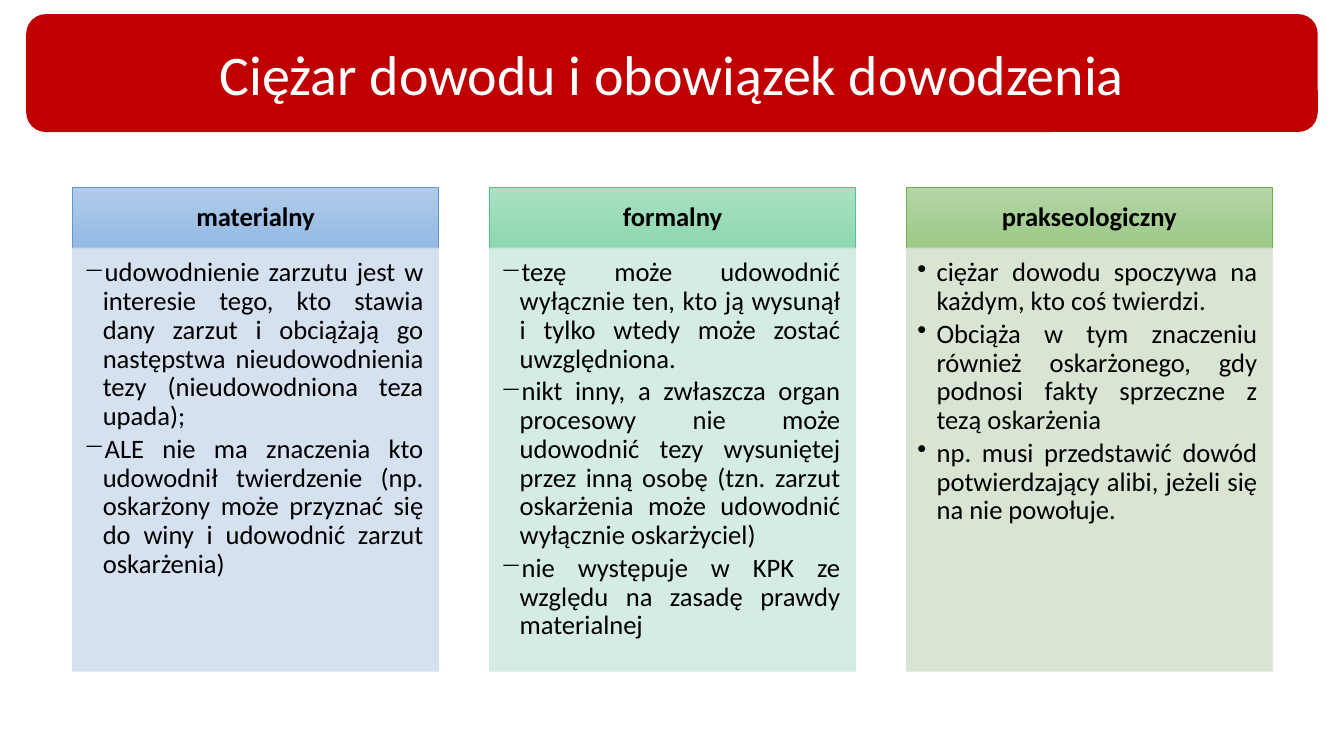
from dataclasses import dataclass

from lxml.etree import SubElement
from pptx import Presentation
from pptx.dml.color import RGBColor
from pptx.enum.shapes import MSO_SHAPE
from pptx.enum.text import MSO_ANCHOR, PP_ALIGN
from pptx.oxml.ns import qn
from pptx.util import Inches, Pt


@dataclass(frozen=True)
class Theme:
    """Colours, font and type sizes of the slide."""
    font: str = "Calibri"
    title_size: int = 40
    text_size: int = 19
    banner: str = "C00000"
    title: str = "FFFFFF"
    text: str = "000000"


@dataclass(frozen=True)
class Box:
    """A rectangle in inches."""
    left: float
    top: float
    width: float
    height: float


@dataclass(frozen=True)
class Column:
    """Wording and colours of one meaning of the burden of proof."""
    heading: str
    bullet: str
    points: tuple
    gradient: tuple
    border: str
    panel: str


THEME = Theme()
COLUMNS = (
    Column("materialny", "−", (
        "udowodnienie zarzutu jest w interesie tego, kto stawia dany zarzut i obciążają go "
        "następstwa nieudowodnienia tezy (nieudowodniona teza upada);",
        "ALE nie ma znaczenia kto udowodnił twierdzenie (np. oskarżony może przyznać się "
        "do winy i udowodnić zarzut oskarżenia)",
    ), ("B1CBE9", "93B9E4"), "5B9BD5", "D2DEEF"),
    Column("formalny", "−", (
        "tezę może udowodnić wyłącznie ten, kto ją wysunął i tylko wtedy może zostać "
        "uwzględniona.",
        "nikt inny, a zwłaszcza organ procesowy nie może udowodnić tezy wysuniętej przez "
        "inną osobę (tzn. zarzut oskarżenia może udowodnić wyłącznie oskarżyciel)",
        "nie występuje w KPK ze względu na zasadę prawdy materialnej",
    ), ("ABE0C3", "8CD8AF"), "4DC58D", "D0EAE1"),
    Column("prakseologiczny", "•", (
        "ciężar dowodu spoczywa na każdym, kto coś twierdzi.",
        "Obciąża w tym znaczeniu również oskarżonego, gdy podnosi fakty sprzeczne z tezą "
        "oskarżenia",
        "np. musi przedstawić dowód potwierdzający alibi, jeżeli się na nie powołuje.",
    ), ("B5D5A7", "9CC987"), "70AD47", "D5E3CF"),
)


def add_panel(slide, box, kind, anchor, insets):
    """Add a shadowless shape with the given text anchor and insets."""
    panel = slide.shapes.add_shape(kind, Inches(box.left), Inches(box.top),
                                   Inches(box.width), Inches(box.height))
    panel.shadow.inherit = False
    frame = panel.text_frame
    frame.word_wrap = True
    frame.vertical_anchor = anchor
    (frame.margin_left, frame.margin_top,
     frame.margin_right, frame.margin_bottom) = map(Inches, insets)
    return panel


def style_paragraph(para, align, size, color, bold=False):
    """Set the alignment and font of a paragraph."""
    para.alignment = align
    para.font.name = THEME.font
    para.font.size = Pt(size)
    para.font.bold = bold
    para.font.color.rgb = RGBColor.from_string(color)


def add_bullet(para, symbol):
    """Give a paragraph a hanging bullet."""
    properties = para._p.get_or_add_pPr()
    properties.set("marL", str(Inches(0.19)))
    properties.set("indent", str(Inches(-0.19)))
    SubElement(properties, qn("a:buChar"), char=symbol)


def set_opacity(color_format, percent):
    """Make a solid fill or line partly transparent."""
    for color in color_format._xPr.iter(qn("a:srgbClr")):
        SubElement(color, qn("a:alpha"), val=str(percent * 1000))


def add_banner(slide, box, title):
    """Add the rounded title banner."""
    banner = add_panel(slide, box, MSO_SHAPE.ROUNDED_RECTANGLE,
                       MSO_ANCHOR.MIDDLE, (0.1, 0.05, 0.1, 0.05))
    banner.fill.solid()
    banner.fill.fore_color.rgb = RGBColor.from_string(THEME.banner)
    banner.line.fill.background()
    para = banner.text_frame.paragraphs[0]
    para.text = title
    style_paragraph(para, PP_ALIGN.CENTER, THEME.title_size, THEME.title)


def add_heading(slide, box, column):
    """Add the gradient heading of a column."""
    heading = add_panel(slide, box, MSO_SHAPE.RECTANGLE,
                        MSO_ANCHOR.MIDDLE, (0.15, 0.08, 0.15, 0.08))
    heading.fill.gradient()
    heading.fill.gradient_angle = 270
    for position, (stop, color) in enumerate(zip(heading.fill.gradient_stops, column.gradient)):
        stop.position = position
        stop.color.rgb = RGBColor.from_string(color)
    heading.line.color.rgb = RGBColor.from_string(column.border)
    heading.line.width = Pt(0.5)
    para = heading.text_frame.paragraphs[0]
    para.text = column.heading
    para.line_spacing = 0.9
    style_paragraph(para, PP_ALIGN.CENTER, THEME.text_size, THEME.text, bold=True)


def add_points(slide, box, column):
    """Add the bulleted body of a column."""
    body = add_panel(slide, box, MSO_SHAPE.RECTANGLE,
                     MSO_ANCHOR.TOP, (0.11, 0.11, 0.15, 0.17))
    body.fill.solid()
    body.fill.fore_color.rgb = RGBColor.from_string(column.panel)
    body.line.color.rgb = RGBColor.from_string(column.panel)
    body.line.width = Pt(0.5)
    set_opacity(body.fill, 90)
    frame = body.text_frame
    for index, point in enumerate(column.points):
        para = frame.add_paragraph() if index else frame.paragraphs[0]
        para.text = point
        para.level = 1
        para.line_spacing = 0.9
        para.space_after = Pt(2.85)
        add_bullet(para, column.bullet)
        style_paragraph(para, PP_ALIGN.JUSTIFY, THEME.text_size, THEME.text)


def add_columns(slide, box, columns, width=3.63, heading_height=0.6):
    """Spread the columns evenly across the box."""
    pitch = (box.width - width) / (len(columns) - 1)
    for index, column in enumerate(columns):
        left = box.left + index * pitch
        add_heading(slide, Box(left, box.top, width, heading_height), column)
        add_points(slide, Box(left, box.top + heading_height, width,
                              box.height - heading_height), column)


def main():
    """Build and save the deck."""
    deck = Presentation()
    deck.slide_width, deck.slide_height = Inches(13.33), Inches(7.5)
    slide = deck.slides.add_slide(deck.slide_layouts[6])
    add_columns(slide, Box(0.72, 1.86, 11.9, 4.8), COLUMNS)
    add_banner(slide, Box(0.26, 0.14, 12.81, 1.17), "Ciężar dowodu i obowiązek dowodzenia")
    deck.save("out.pptx")


if __name__ == "__main__":
    main()
